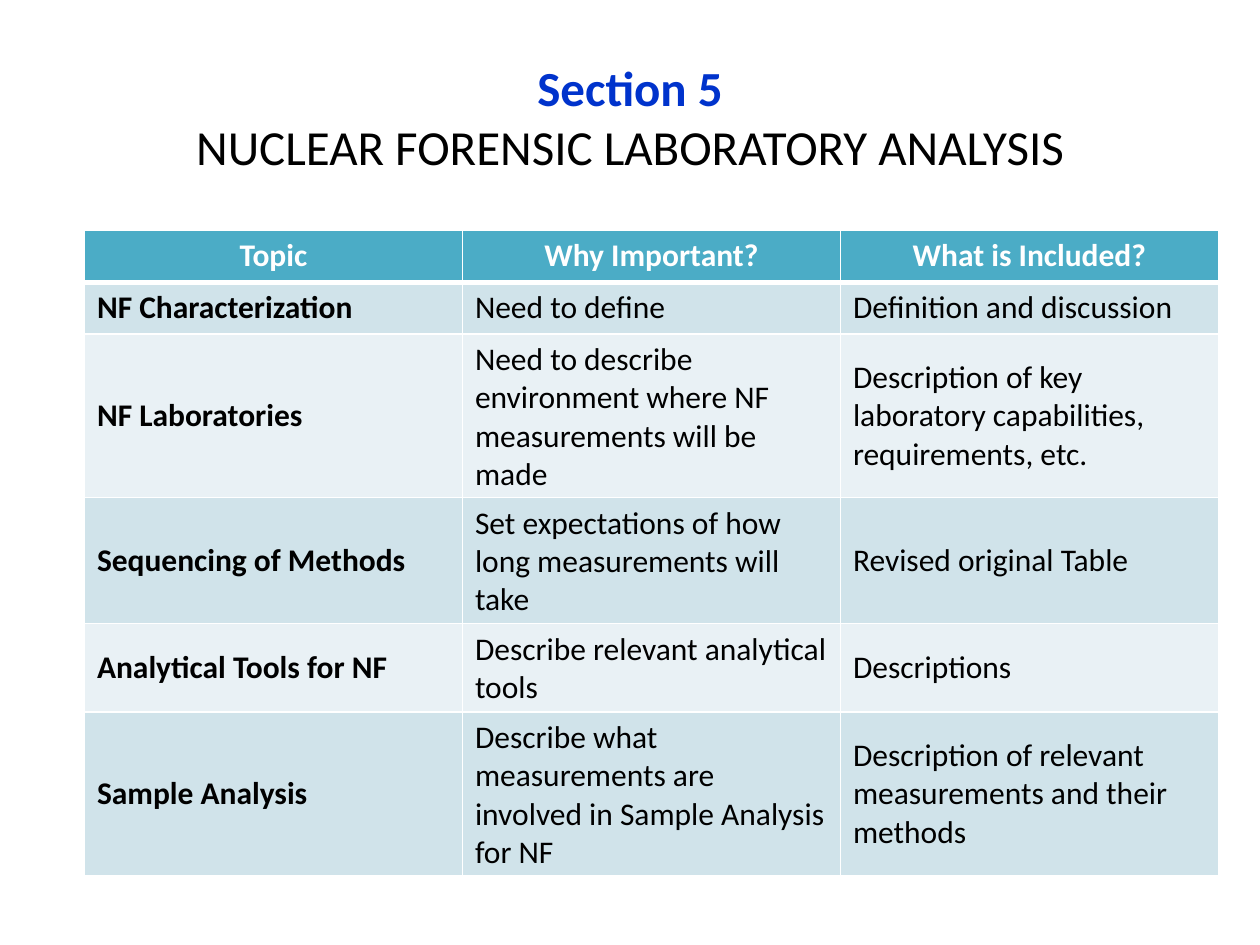
from lxml import etree
from pptx import Presentation
from pptx.dml.color import RGBColor
from pptx.enum.text import MSO_ANCHOR, PP_ALIGN
from pptx.oxml.ns import qn
from pptx.util import Inches, Pt

CENTER, LEFT = PP_ALIGN.CENTER, PP_ALIGN.LEFT
TOP, MIDDLE = MSO_ANCHOR.TOP, MSO_ANCHOR.MIDDLE

BLUE = RGBColor(0x00, 0x33, 0xCC)
BLACK = RGBColor(0x00, 0x00, 0x00)
WHITE = RGBColor(0xFF, 0xFF, 0xFF)
TEAL = RGBColor(0x4B, 0xAC, 0xC6)
BANDS = (RGBColor(0xD0, 0xE3, 0xEA), RGBColor(0xE9, 0xF1, 0xF5))

TOPICS = [
    ("Topic", "Why Important?", "What is Included?"),
    ("NF Characterization", "Need to define", "Definition and discussion"),
    ("NF Laboratories",
     "Need to describe environment where NF measurements will be made",
     "Description of key laboratory capabilities, requirements, etc."),
    ("Sequencing of Methods",
     "Set expectations of how long measurements will take",
     "Revised original Table"),
    ("Analytical Tools for NF", "Describe relevant analytical tools", "Descriptions"),
    ("Sample Analysis",
     "Describe what measurements are involved in Sample Analysis for NF",
     "Description of relevant measurements and their methods"),
]


class SlideBuilder:
    font_name = "Calibri"
    title_size = Pt(28)
    table_size = Pt(18)

    def __init__(self, slide):
        self.slide = slide

    def style(self, font, size, color, bold):
        font.name = self.font_name
        font.size = size
        font.bold = bold
        font.color.rgb = color

    def title(self, section, subject, left, top, width, height):
        frame = self.slide.shapes.add_textbox(left, top, width, height).text_frame
        frame.word_wrap = True
        frame.vertical_anchor = MIDDLE
        heading = frame.paragraphs[0]
        heading.alignment = CENTER
        section_run = heading.add_run()
        section_run.text = section
        self.style(section_run.font, self.title_size, BLUE, True)
        heading.add_line_break()
        subject_run = heading.add_run()
        subject_run.text = subject
        self.style(subject_run.font, self.title_size, BLACK, False)

    def borders(self, cell, top, bottom):
        properties = cell._tc.get_or_add_tcPr()
        for side, weight in (("L", 1), ("R", 1), ("T", top), ("B", bottom)):
            line = etree.SubElement(properties, qn(f"a:ln{side}"), w=str(Pt(weight)))
            fill = etree.SubElement(line, qn("a:solidFill"))
            etree.SubElement(fill, qn("a:srgbClr"), val=str(WHITE))

    def table(self, rows, left, top, column_width, row_height):
        columns = len(rows[0])
        table = self.slide.shapes.add_table(
            len(rows), columns, left, top,
            column_width * columns, row_height * len(rows)).table
        for r, texts in enumerate(rows):
            header = r == 0
            for c, text in enumerate(texts):
                cell = table.cell(r, c)
                cell.text = text
                cell.vertical_anchor = TOP if header else MIDDLE
                self.borders(cell, 3 if r == 1 else 1, 3 if header else 1)
                cell.fill.solid()
                cell.fill.fore_color.rgb = TEAL if header else BANDS[(r - 1) % 2]
                paragraph = cell.text_frame.paragraphs[0]
                paragraph.alignment = CENTER if header else LEFT
                self.style(paragraph.font, self.table_size,
                           WHITE if header else BLACK, header or c == 0)


def main():
    presentation = Presentation()
    presentation.slide_width = Inches(10)
    presentation.slide_height = Inches(7.5)
    builder = SlideBuilder(presentation.slides.add_slide(presentation.slide_layouts[6]))
    builder.title("Section 5", "NUCLEAR FORENSIC LABORATORY ANALYSIS",
                  Inches(0.5), Inches(0.3), Inches(9), Inches(1.25))
    builder.table(TOPICS, Inches(0.67), Inches(1.83), Inches(3), Inches(0.41))
    presentation.save("out.pptx")


if __name__ == "__main__":
    main()
